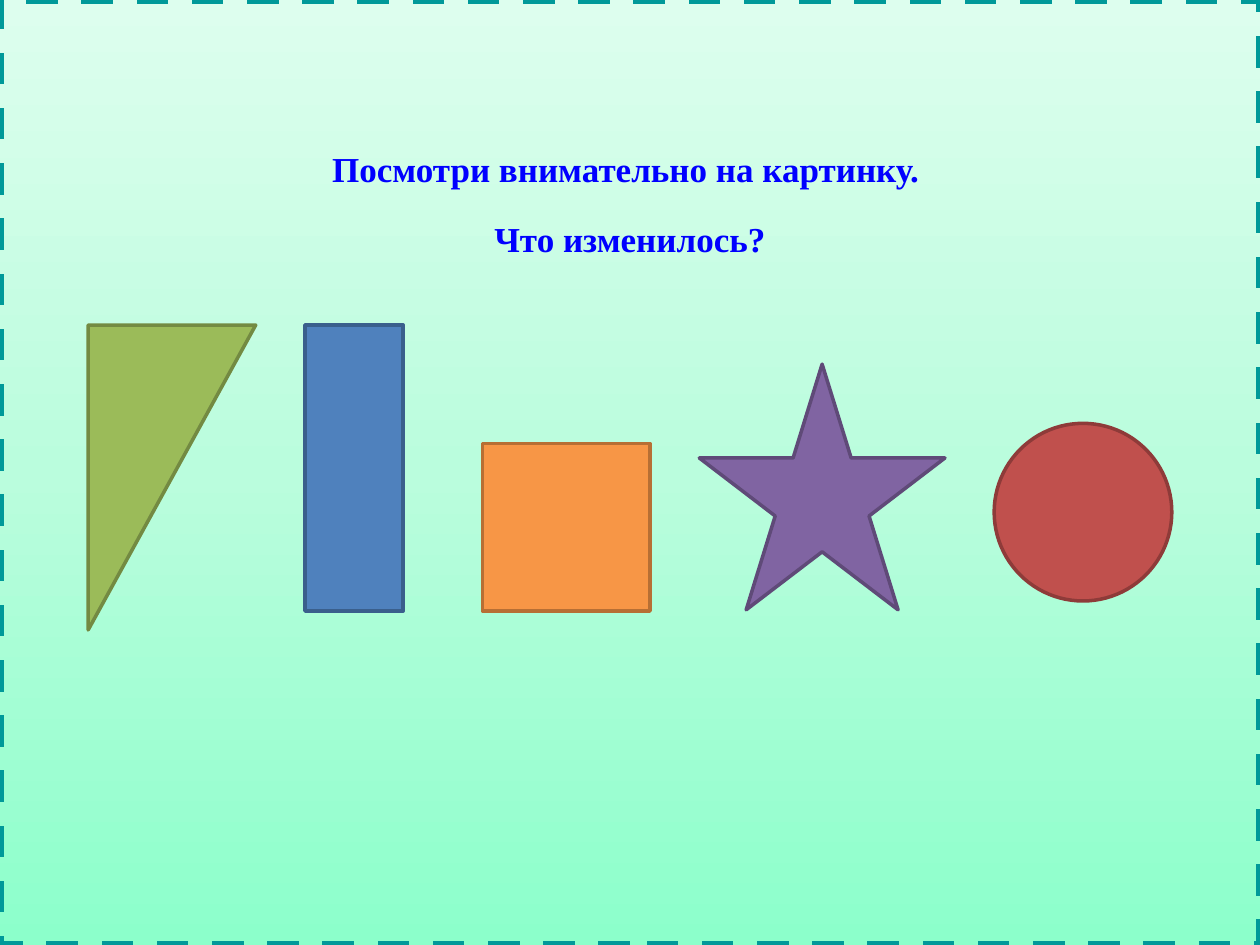
from copy import deepcopy

from pptx import Presentation
from pptx.dml.color import RGBColor
from pptx.enum.dml import MSO_LINE_DASH_STYLE as Dash
from pptx.enum.shapes import MSO_SHAPE as Preset
from pptx.enum.text import MSO_ANCHOR, MSO_AUTO_SIZE, PP_ALIGN
from pptx.util import Inches, Pt

COLORS = {
    "text": "0000FF",
    "border": "009999",
    "mint_dark": "8CFFCB",
    "mint": "BAFDDD",
    "mint_light": "DDFEEE",
    "green": "9BBB59", "green_line": "738A42",
    "blue": "4F81BD", "blue_line": "3A5F8C",
    "orange": "F79646", "orange_line": "B76F34",
    "purple": "8064A2", "purple_line": "5F4A78",
    "red": "C0504D", "red_line": "8E3B39",
}
FONT = "Times New Roman"
QUESTION = ["Посмотри внимательно на картинку. ", "Что изменилось?"]

# preset, color, left, top, width, height
FIGURES = [
    (Preset.RIGHT_TRIANGLE, "green", 0.7, 2.58, 1.33, 2.42),
    (Preset.RECTANGLE, "blue", 2.42, 2.58, 0.78, 2.27),
    (Preset.RECTANGLE, "orange", 3.83, 3.52, 1.33, 1.33),
    (Preset.STAR_5_POINT, "purple", 5.55, 2.89, 1.95, 1.95),
    (Preset.OVAL, "red", 7.89, 3.36, 1.41, 1.41),
]


def rgb(name):
    return RGBColor.from_string(COLORS[name])


def place(shape, left, top, width, height):
    shape.left, shape.top = Inches(left), Inches(top)
    shape.width, shape.height = Inches(width), Inches(height)


def outline(shape, color, width):
    shape.line.color.rgb = rgb(color)
    shape.line.width = Pt(width)


def fill_gradient(shape, names, angle):
    """Fill with evenly spaced colors, first to last."""
    fill = shape.fill
    fill.gradient()
    fill.gradient_angle = angle
    stop_list = fill._fill._gradFill.gsLst
    while len(stop_list) < len(names):
        stop_list.append(deepcopy(stop_list[0]))
    for index, (stop, name) in enumerate(zip(fill.gradient_stops, names)):
        stop.position = index / (len(names) - 1)
        stop.color.rgb = rgb(name)


def add_question(slide, left, top, width, height):
    """Turn the title into the framed field that carries the question."""
    title = slide.shapes.title
    place(title, left, top, width, height)
    fill_gradient(title, ["mint_dark", "mint", "mint_light"], 90)
    outline(title, "border", 4.5)
    title.line.dash_style = Dash.DASH

    frame = title.text_frame
    frame.word_wrap = True
    frame.auto_size = MSO_AUTO_SIZE.NONE
    frame.vertical_anchor = MSO_ANCHOR.TOP
    frame.margin_top = Inches(1)
    for index, text in enumerate(QUESTION):
        paragraph = frame.add_paragraph() if index else frame.paragraphs[0]
        paragraph.alignment = PP_ALIGN.CENTER
        paragraph.line_spacing = 1.5
        paragraph.space_before = Pt(4 if index else 0)
        run = paragraph.add_run()
        run.text = text
        run.font.name = FONT
        run.font.size = Pt(20)
        run.font.bold = True
        run.font.color.rgb = rgb("text")


def add_figure(slide, preset, color, left, top, width, height):
    shape = slide.shapes.add_shape(
        preset, Inches(left), Inches(top), Inches(width), Inches(height))
    shape.shadow.inherit = False
    shape.fill.solid()
    shape.fill.fore_color.rgb = rgb(color)
    outline(shape, f"{color}_line", 2)
    if preset == Preset.RIGHT_TRIANGLE:
        shape._element.spPr.xfrm.set("flipV", "1")


def main():
    presentation = Presentation()
    presentation.slide_width = Inches(10)
    presentation.slide_height = Inches(7.5)
    slide = presentation.slides.add_slide(presentation.slide_layouts[5])
    add_question(slide, 0, 0, 10, 7.5)
    for figure in FIGURES:
        add_figure(slide, *figure)
    presentation.save("out.pptx")


if __name__ == "__main__":
    main()
